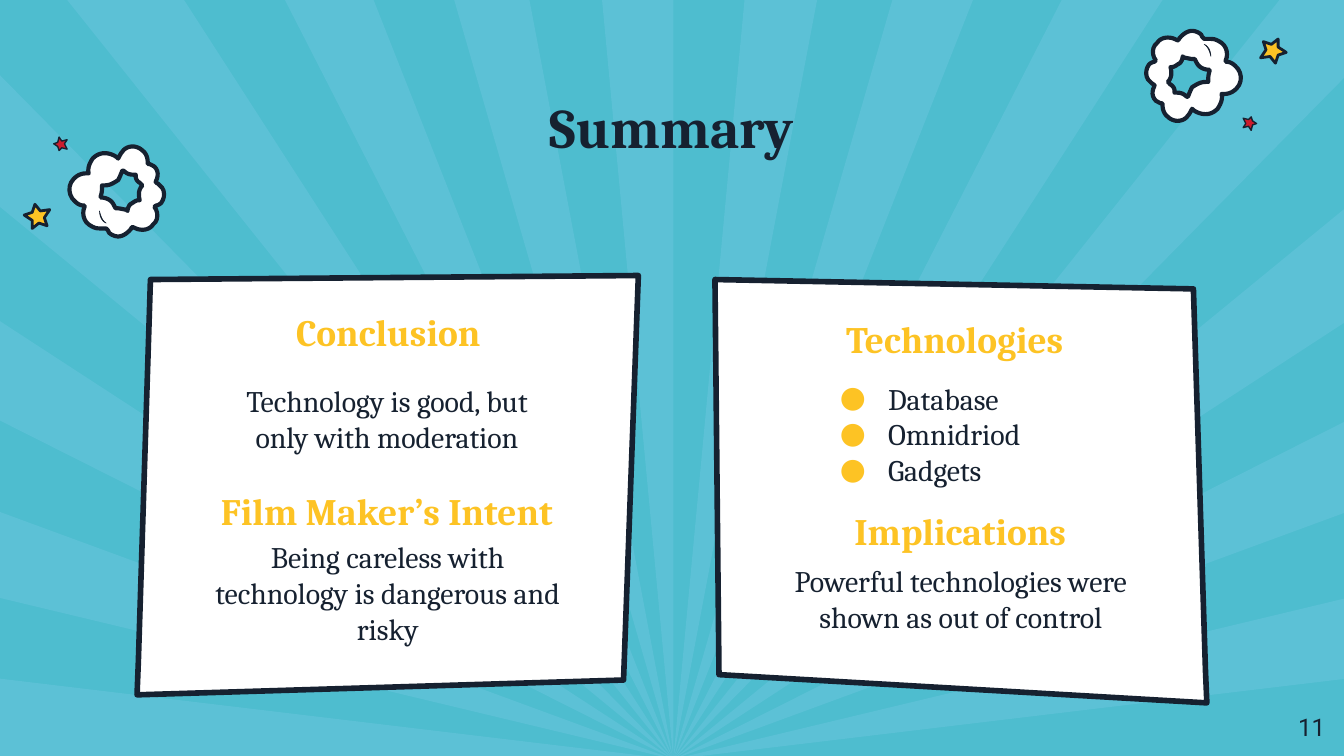
import pptx
import pptx.dml.color
import pptx.enum.text
import pptx.oxml
import pptx.oxml.ns
import pptx.util
from pptx.util import Inches

INK, WHITE, GOLD, RED = "162130", "FFFFFF", "FDC324", "CC1D2D"
SKY, RAY = "4EBDCF", "5CC1D6"
ALIGN = pptx.enum.text.PP_ALIGN
ANCHOR = pptx.enum.text.MSO_ANCHOR

# Ornament outlines in hundredths of an inch inside a 1.05 by 0.74 inch box.
# Two numbers continue with a straight line, six with a cubic curve.
ORNAMENT_SIZE = (105, 74)
CLOUD_RIM = [
    (81, 7), (83, 7, 86, 8, 88, 10), (91, 12, 92, 16, 92, 19), (92, 20),
    (94, 20, 95, 21, 97, 22), (100, 25, 100, 29, 98, 33), (98, 34),
    (99, 34, 100, 35, 101, 36), (105, 39, 105, 45, 102, 49),
    (101, 50, 99, 51, 98, 51), (97, 52), (100, 56, 100, 62, 96, 65),
    (94, 68, 91, 69, 88, 69), (85, 69, 83, 68, 81, 67), (80, 67),
    (80, 68, 79, 69, 78, 70), (76, 72, 73, 74, 70, 74),
    (68, 74, 65, 73, 63, 71), (63, 70, 62, 69, 61, 68), (60, 68),
    (59, 68, 58, 68, 56, 68), (53, 68, 51, 67, 48, 65),
    (44, 62, 43, 56, 45, 52), (45, 51), (42, 51, 40, 50, 38, 48),
    (33, 44, 32, 36, 37, 31), (39, 29, 42, 27, 46, 27), (48, 27),
    (47, 23, 49, 19, 51, 16), (54, 13, 57, 12, 60, 12),
    (63, 12, 66, 13, 69, 15), (70, 16), (71, 14, 72, 12, 73, 11),
    (75, 8, 78, 7, 81, 7)]
CLOUD_HOLE = [
    (73, 25), (72, 28, 71, 30, 70, 32), (67, 34, 64, 36, 60, 36), (58, 36),
    (58, 39, 58, 41, 57, 44), (57, 45), (60, 45, 63, 46, 65, 48),
    (66, 49, 67, 51, 68, 53), (69, 53), (72, 53, 74, 54, 76, 54), (77, 55),
    (77, 53, 78, 51, 79, 50), (81, 49, 83, 47, 85, 47), (86, 47),
    (85, 43, 85, 39, 88, 36), (87, 35, 86, 34, 86, 34),
    (84, 33, 83, 31, 83, 29), (83, 28), (81, 28), (78, 28, 76, 27, 74, 25)]
CLOUD_CREASE = [(56, 55), (56, 59, 58, 63, 61, 64), (58, 62, 57, 59, 56, 55)]
BIG_STAR = [(0, 58), (6, 56), (8, 50), (12, 55), (19, 54), (15, 60),
            (17, 66), (11, 64), (6, 68), (6, 62)]
SMALL_STAR = [(22, 5), (25, 4), (26, 0), (28, 3), (32, 2), (30, 5),
              (32, 9), (28, 8), (26, 10), (25, 7)]


def color(value):
    return pptx.dml.color.RGBColor.from_string(value)


def add_outline(page, contours, fill, line=None, width=0):
    """Draw closed contours, given as points in inches, as one shape."""
    contours = [[(Inches(x), Inches(y)) for x, y in points] for points in contours]
    builder = page.shapes.build_freeform(*contours[0][0], scale=1.0)
    builder.add_line_segments(contours[0][1:], close=True)
    for points in contours[1:]:
        builder.move_to(*points[0])
        builder.add_line_segments(points[1:], close=True)
    shape = builder.convert_to_shape()
    shape.shadow.inherit = False
    shape.fill.solid()
    shape.fill.fore_color.rgb = color(fill)
    if line:
        shape.line.color.rgb = color(line)
        shape.line.width = pptx.util.Pt(width)
        join = pptx.oxml.parse_xml("<a:round %s/>" % pptx.oxml.ns.nsdecls("a"))
        shape.line._get_or_add_ln().append(join)
    else:
        shape.line.fill.background()


def flatten(outline, steps=6):
    """Turn lines and cubic curves into a list of points."""
    points = [outline[0]]
    for part in outline[1:]:
        if len(part) == 2:
            points.append(part)
            continue
        knots = [points[-1], part[:2], part[2:4], part[4:]]
        for step in range(1, steps + 1):
            t = step / steps
            weights = ((1 - t) ** 3, 3 * t * (1 - t) ** 2, 3 * t * t * (1 - t), t ** 3)
            points.append(tuple(sum(w * knot[axis] for w, knot in zip(weights, knots))
                                for axis in (0, 1)))
    return points


def add_bullet(para):
    properties = para._p.get_or_add_pPr()
    properties.set("marL", str(Inches(0.5)))
    properties.set("indent", str(Inches(-0.36)))
    names = pptx.oxml.ns.nsdecls("a")
    for xml in ('<a:buClr %s><a:srgbClr val="%s"/></a:buClr>' % (names, GOLD),
                '<a:buFont %s typeface="Cambria"/>' % names,
                '<a:buChar %s char="●"/>' % names):
        properties.append(pptx.oxml.parse_xml(xml))


def add_text(page, box, text, size, ink=INK, bold=False, font="Cambria",
             align=ALIGN.CENTER, anchor=ANCHOR.TOP, bullets=False):
    frame = page.shapes.add_textbox(*map(Inches, box)).text_frame
    frame.word_wrap = True
    frame.vertical_anchor = anchor
    frame.margin_left = frame.margin_right = Inches(0.1)
    frame.margin_top = frame.margin_bottom = Inches(0.1)
    frame.text = text
    for para in frame.paragraphs:
        para.alignment = align
        if bullets:
            add_bullet(para)
        for span in para.runs:
            span.font.name = font
            span.font.size = pptx.util.Pt(size)
            span.font.bold = bold
            span.font.color.rgb = color(ink)


def add_sunburst(page, box):
    """Fan alternate rays out from the bottom centre of the box."""
    left, top, width, height = box
    side = [(0, y) for y in (5.65, 5.05, 4.45, 3.81, 3.13, 2.39, 1.54, 0.56)]
    ceiling = [(x, 0) for x in (0.5, 1.37, 2.12, 2.78, 3.38, 3.94, 4.48)]
    half = side + ceiling
    rim = half + [(width / 2, 0)] + [(width - x, y) for x, y in reversed(half)]
    for start, end in zip(rim[::2], rim[1::2]):
        ray = [(width / 2, height), start, end]
        if start[1] == 0 and end[1] > 0:
            ray.insert(2, (width, 0))
        add_outline(page, [[(left + x, top + y) for x, y in ray]], RAY)


def add_card(page, box, corners, texts):
    """Draw a slanted card; each text is (box, wording, is heading, has bullets)."""
    left, top = box
    add_outline(page, [[(left + x, top + y) for x, y in corners]], WHITE, INK, 3)
    for (x, y, width, height), wording, heading, bullets in texts:
        add_text(page, (left + x, top + y, width, height), wording,
                 20 if heading else 16, GOLD if heading else INK, heading,
                 align=ALIGN.LEFT if bullets else ALIGN.CENTER, bullets=bullets)


def add_ornament(page, box, turned=False):
    """Draw a cloud with two stars, optionally turned by half a circle."""
    left, top = box

    def place(outline):
        points = flatten(outline)
        if turned:
            points = [(ORNAMENT_SIZE[0] - x, ORNAMENT_SIZE[1] - y) for x, y in points]
        return [(left + x / 100, top + y / 100) for x, y in points]

    add_outline(page, [place(BIG_STAR)], GOLD, INK, 1.5)
    add_outline(page, [place(SMALL_STAR)], RED, INK, 0.75)
    add_outline(page, [place(CLOUD_RIM), place(CLOUD_HOLE)], WHITE, INK, 2.25)
    add_outline(page, [place(CLOUD_CREASE)], INK, INK, 0.31)


def build_summary(deck):
    page = deck.slides.add_slide(deck.slide_layouts[6])
    page.background.fill.solid()
    page.background.fill.fore_color.rgb = color(SKY)
    add_sunburst(page, (0, 0, 10.02, 5.65))
    add_text(page, (1.61, 0.59, 6.78, 1.09), "Summary", 30, bold=True)
    add_card(page, (5.32, 2.08),
             [(3.56, 0.07), (0, 0), (0.03, 2.94), (3.66, 3.15), (3.65, 2.91)],
             [((0.69, 0.17, 2.19, 0.33), "Technologies", True, False),
              ((0.69, 0.65, 2.19, 0.74), "Database\nOmnidriod\nGadgets", False, True),
              ((0.73, 1.6, 2.19, 0.33), "Implications", True, False),
              ((0.33, 2.01, 3, 0.74),
               "Powerful technologies were shown as out of control", False, False)])
    add_card(page, (1.02, 2.05),
             [(0.1, 0.03), (3.73, 0), (3.62, 3.01), (0, 3.12), (0.01, 2.87)],
             [((0.37, 0.15, 3, 0.33), "Conclusion", True, False),
              ((0.55, 0.7, 2.62, 0.74),
               "Technology is good, but only with moderation", False, False),
              ((0.29, 1.48, 3.14, 0.33), "Film Maker’s Intent", True, False),
              ((0.48, 1.86, 2.77, 0.74),
               "Being careless with technology is dangerous and risky", False, False)])
    add_ornament(page, (0.18, 1.02))
    add_ornament(page, (8.52, 0.23), turned=True)
    add_text(page, (9.36, 5.19, 0.6, 0.43), "11", 13, font="Roboto",
             align=ALIGN.RIGHT, anchor=ANCHOR.MIDDLE)


def main():
    deck = pptx.Presentation()
    deck.slide_width = Inches(10)
    deck.slide_height = deck.slide_width * 9 // 16
    build_summary(deck)
    deck.save("out.pptx")


if __name__ == "__main__":
    main()
